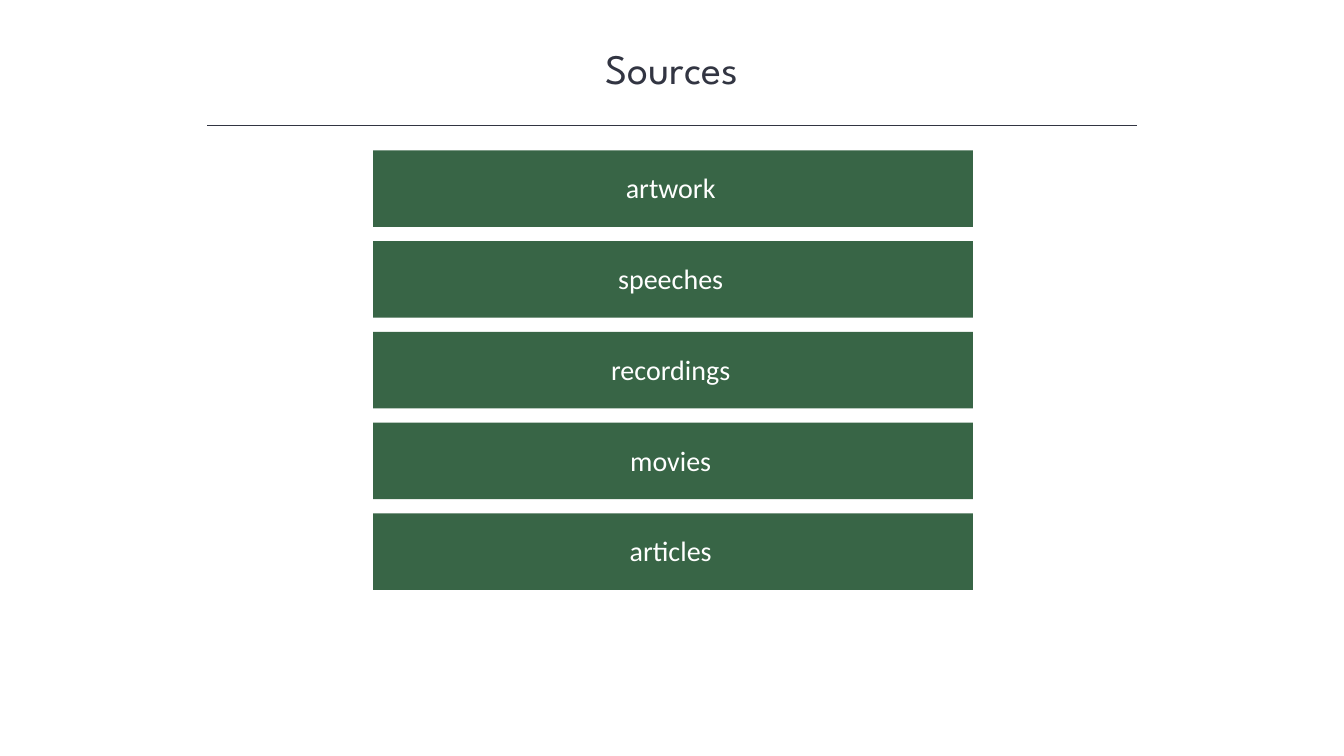
from lxml import etree
from pptx import Presentation
from pptx import util as u
from pptx.dml.color import RGBColor
from pptx.enum import shapes, text
from pptx.oxml.ns import qn

INK = RGBColor(0x32, 0x35, 0x42)
GREEN = RGBColor(0x38, 0x65, 0x46)
WHITE = RGBColor(0xFF, 0xFF, 0xFF)
SOURCES = ["artwork", "speeches", "recordings", "movies", "articles"]
BAR_TOP = 107.5
BAR_PITCH = 64.8


def write(frame, words, font, size, color):
    """Put one centred run of text in a frame."""
    frame.word_wrap = True
    para = frame.paragraphs[0]
    para.alignment = text.PP_ALIGN.CENTER
    span = para.add_run()
    span.text = words
    span.font.name = font
    span.font.size = u.Pt(size)
    span.font.color.rgb = color


def place_title(page, words):
    """Position and fill the title placeholder."""
    title = page.shapes.title
    title.left, title.top = u.Pt(120), u.Pt(26.6)
    title.width, title.height = u.Pt(720), u.Pt(44)
    frame = title.text_frame
    frame.vertical_anchor = text.MSO_ANCHOR.TOP
    frame.auto_size = text.MSO_AUTO_SIZE.NONE
    write(frame, words, "League Spartan", 30, INK)
    frame.paragraphs[0].line_spacing = 1.0


def add_rule(page, left, right, top):
    """Draw the thin horizontal line below the title."""
    rule = page.shapes.add_connector(
        shapes.MSO_CONNECTOR.STRAIGHT, u.Pt(left), u.Pt(top), u.Pt(right), u.Pt(top)
    )
    rule.line.color.rgb = INK
    rule.line.width = u.Pt(1)
    etree.SubElement(rule._element.spPr, qn("a:effectLst"))


def add_bar(page, top, words):
    """Add one green bar with its label."""
    bar = page.shapes.add_shape(
        shapes.MSO_SHAPE.RECTANGLE, u.Pt(266.5), u.Pt(top), u.Pt(428.5), u.Pt(54.7)
    )
    bar.shadow.inherit = False
    bar.fill.solid()
    bar.fill.fore_color.rgb = GREEN
    bar.line.fill.background()
    frame = bar.text_frame
    frame.vertical_anchor = text.MSO_ANCHOR.MIDDLE
    frame.margin_right = u.Pt(10.5)
    frame.margin_bottom = u.Pt(5)
    write(frame, words, "Calibri", 20, WHITE)


def main():
    """Build the slide and save the deck."""
    deck = Presentation()
    deck.slide_width, deck.slide_height = u.Pt(960), u.Pt(540)
    page = deck.slides.add_slide(deck.slide_layouts[5])
    place_title(page, "Sources")
    add_rule(page, 148, 812, 89.5)
    for index, source in enumerate(SOURCES):
        add_bar(page, BAR_TOP + index * BAR_PITCH, source)
    deck.save("out.pptx")


if __name__ == "__main__":
    main()
